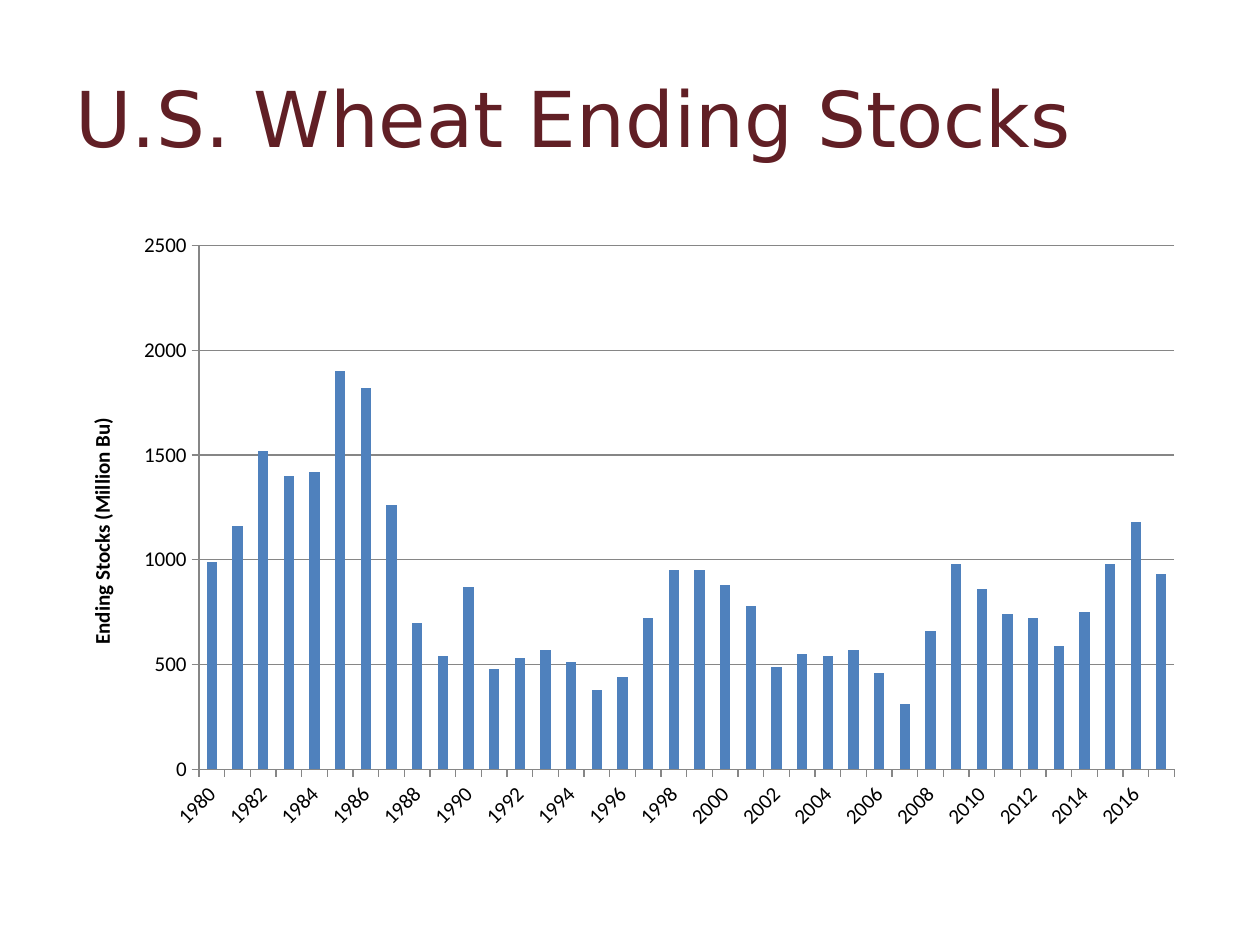
from lxml import etree
from pptx import Presentation
from pptx.chart.data import CategoryChartData
from pptx.dml.color import RGBColor
from pptx.enum.chart import XL_CHART_TYPE, XL_TICK_MARK
from pptx.enum.text import MSO_ANCHOR, PP_ALIGN
from pptx.oxml.ns import qn
from pptx.util import Inches, Pt


def color(hex_string):
    return RGBColor.from_string(hex_string)


def add_setting(parent, name, value):
    setting = etree.SubElement(parent, qn(f"c:{name}"))
    setting.set("val", str(value))
    return setting


deck = Presentation()
deck.slide_width = Inches(10)
deck.slide_height = Inches(7.5)
page = deck.slides.add_slide(deck.slide_layouts[5])

title = page.shapes.title
title.left, title.top = Inches(0.5), Inches(0.3)
title.width, title.height = Inches(9), Inches(1.25)
title.text_frame.text = "U.S. Wheat Ending Stocks"
title.text_frame.vertical_anchor = MSO_ANCHOR.MIDDLE
heading = title.text_frame.paragraphs[0]
heading.alignment = PP_ALIGN.LEFT
span = heading.runs[0]
span.font.name = "DejaVu Sans"
span.font.size = Pt(44)
span.font.color.rgb = color("611F25")

stocks = [
    990, 1160, 1520, 1400, 1420, 1900, 1820, 1260, 700, 540,
    870, 480, 530, 570, 510, 380, 440, 720, 950, 950,
    880, 780, 490, 550, 540, 570, 460, 310, 660, 980,
    860, 740, 720, 590, 750, 980, 1180, 930,
]
chart_data = CategoryChartData()
chart_data.categories = [str(1980 + offset) for offset in range(len(stocks))]
chart_data.add_series("Ending Stocks", stocks)
chart = page.shapes.add_chart(
    XL_CHART_TYPE.COLUMN_CLUSTERED,
    Inches(0.5), Inches(1.75), Inches(9), Inches(4.95), chart_data,
).chart
chart.has_legend = False
chart.has_title = False
chart.font.name = "Calibri"
chart.font.size = Pt(12)
chart.font.color.rgb = color("000000")

plot = chart.plots[0]
plot.gap_width = 150
plot.vary_by_categories = False
bars = plot.series[0]
bars.format.fill.solid()
bars.format.fill.fore_color.rgb = color("4F81BD")

years = chart.category_axis
amounts = chart.value_axis
amounts.minimum_scale = 0
amounts.maximum_scale = 2500
amounts.major_unit = 500
amounts.has_major_gridlines = True
amounts.tick_labels.number_format = "0"
amounts.tick_labels.number_format_is_linked = False

for axis in (years, amounts):
    axis.major_tick_mark = XL_TICK_MARK.OUTSIDE
    axis.minor_tick_mark = XL_TICK_MARK.NONE
    axis.tick_labels.font.size = Pt(12)
for line in (years.format.line, amounts.format.line, amounts.major_gridlines.format.line):
    line.color.rgb = color("868686")
    line.width = Pt(0.75)

amounts.axis_title.text_frame.text = "Ending Stocks (Million Bu)"
label = amounts.axis_title.text_frame.paragraphs[0].runs[0]
label.font.name = "Calibri"
label.font.size = Pt(12)
label.font.bold = True
label.font.color.rgb = color("000000")
amounts.axis_title._element.find(f".//{qn('a:bodyPr')}").set("rot", "-5400000")

years._element.find(f"{qn('c:txPr')}/{qn('a:bodyPr')}").set("rot", "-2700000")
label_skip = add_setting(years._element, "tickLblSkip", 2)
years._element.find(qn("c:noMultiLvlLbl")).addprevious(label_skip)

plot_area = chart._chartSpace.find(f".//{qn('c:plotArea')}")
layout = plot_area.find(qn("c:layout"))
if layout is None:
    layout = etree.Element(qn("c:layout"))
    plot_area.insert(0, layout)
manual = etree.SubElement(layout, qn("c:manualLayout"))
for name, value in (
    ("layoutTarget", "inner"), ("xMode", "edge"), ("yMode", "edge"),
    ("x", 0.12), ("y", 0.04), ("w", 0.86), ("h", 0.84),
):
    add_setting(manual, name, value)

deck.save("out.pptx")
